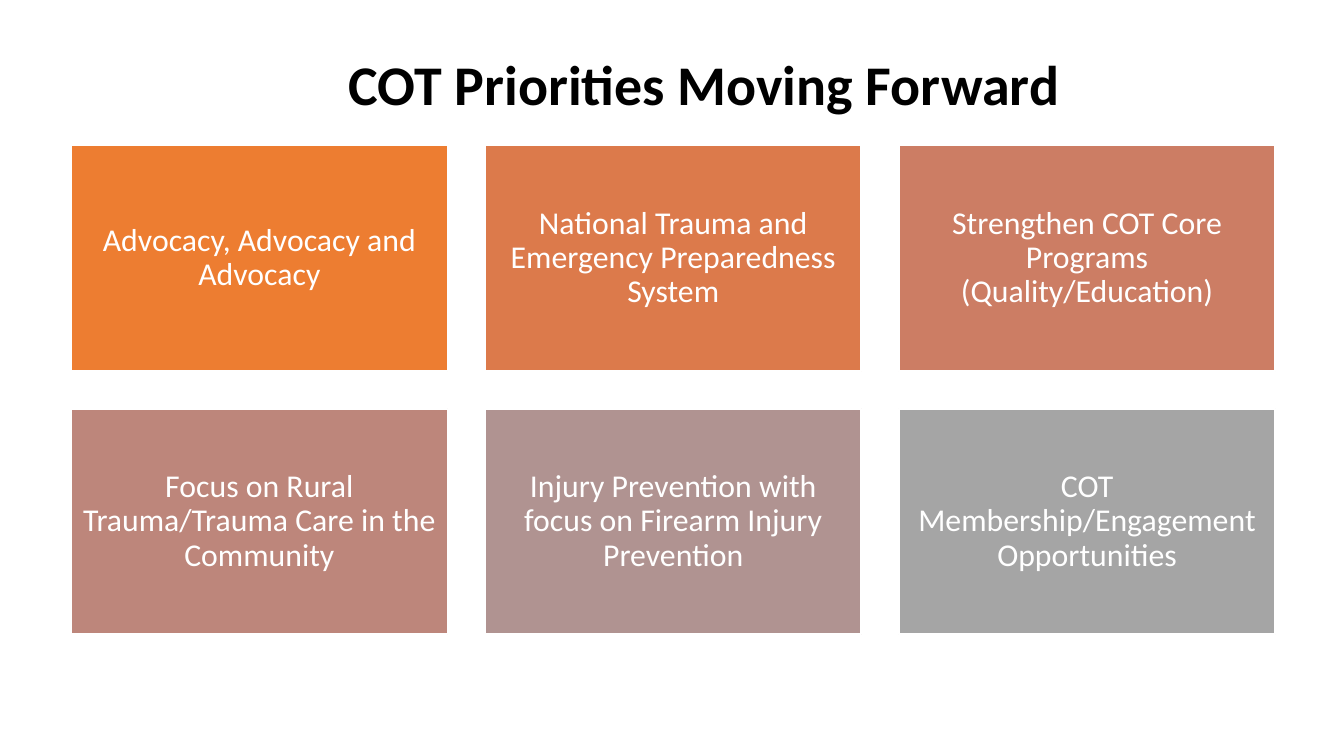
from pptx import Presentation
from pptx.dml.color import RGBColor
from pptx.enum import shapes, text
from pptx.util import Pt

COLORS = {
    "title": "000000",
    "white": "FFFFFF",
    "advocacy": "ED7D31",
    "preparedness": "DC7A4B",
    "programs": "CC7D64",
    "rural": "BD867B",
    "prevention": "B09391",
    "membership": "A5A5A5",
}
PRIORITIES = [
    ("advocacy", "Advocacy, Advocacy and Advocacy"),
    ("preparedness", "National Trauma and Emergency Preparedness System"),
    ("programs", "Strengthen COT Core Programs (Quality/Education)"),
    ("rural", "Focus on Rural Trauma/Trauma Care in the Community"),
    ("prevention", "Injury Prevention with focus on Firearm Injury Prevention"),
    ("membership", "COT Membership/Engagement Opportunities"),
]
COLUMNS = 3
LEFT, TOP = 38.2, 77.8
CARD_WIDTH, CARD_HEIGHT, GAP = 201.6, 121, 20.1


def color(name):
    return RGBColor.from_string(COLORS[name])


def write(box, words, *, size, fill, bold=False, inset=5):
    frame = box.text_frame
    frame.word_wrap = True
    frame.auto_size = text.MSO_AUTO_SIZE.NONE
    frame.vertical_anchor = text.MSO_ANCHOR.MIDDLE
    frame.margin_left = frame.margin_right = Pt(inset)
    frame.margin_top = frame.margin_bottom = Pt(inset)
    para = frame.paragraphs[0]
    para.alignment = text.PP_ALIGN.CENTER
    para.line_spacing = 0.9
    para.space_before = Pt(0)
    span = para.add_run()
    span.text = words
    span.font.name = "Calibri"
    span.font.size = Pt(size)
    span.font.bold = bold
    span.font.color.rgb = color(fill)


def add_title(page, words):
    title = page.shapes.title
    title.left, title.top = Pt(80.6), Pt(20.9)
    title.width, title.height = Pt(593.3), Pt(51.8)
    write(title, words, size=30, fill="title", bold=True)


def add_card(page, index, fill, words):
    row, column = divmod(index, COLUMNS)
    card = page.shapes.add_shape(
        shapes.MSO_SHAPE.RECTANGLE,
        Pt(LEFT + column * (CARD_WIDTH + GAP)),
        Pt(TOP + row * (CARD_HEIGHT + GAP)),
        Pt(CARD_WIDTH),
        Pt(CARD_HEIGHT),
    )
    card.shadow.inherit = False
    card.fill.solid()
    card.fill.fore_color.rgb = color(fill)
    card.line.color.rgb = color("white")
    card.line.width = Pt(1)
    write(card, words, size=17, fill="white")


def main():
    deck = Presentation()
    deck.slide_width, deck.slide_height = Pt(720), Pt(405)
    page = deck.slides.add_slide(deck.slide_layouts[5])
    add_title(page, "COT Priorities Moving Forward")
    for index, (fill, words) in enumerate(PRIORITIES):
        add_card(page, index, fill, words)
    deck.save("out.pptx")


if __name__ == "__main__":
    main()
